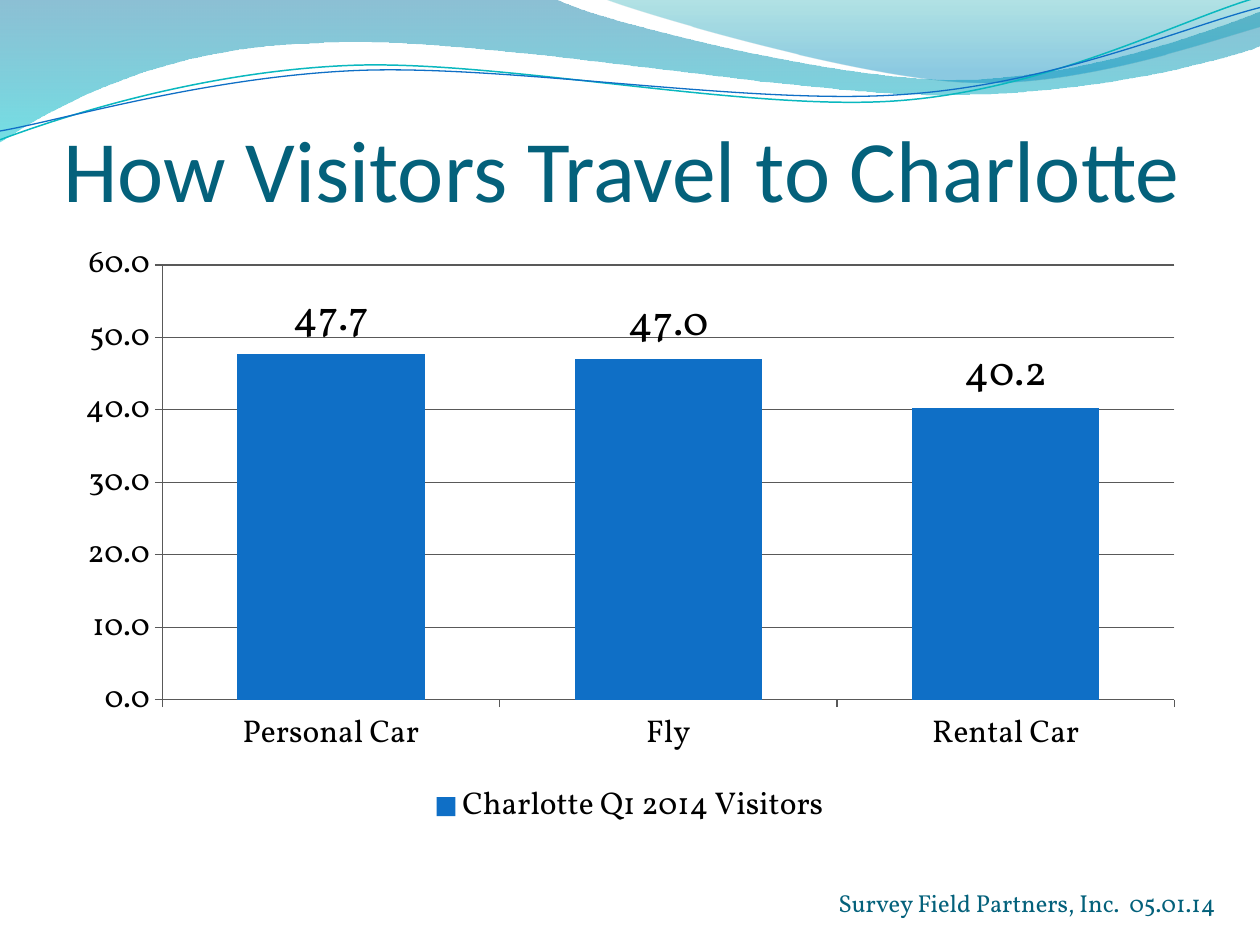
"""Build a slide with a column chart of how visitors travel to Charlotte."""
from lxml.etree import SubElement
from pptx import Presentation
from pptx.chart.data import CategoryChartData as Data
from pptx.dml.color import RGBColor as Rgb
from pptx.enum.chart import XL_CHART_TYPE as Kind, XL_LABEL_POSITION as Spot
from pptx.enum.chart import XL_LEGEND_POSITION as Side, XL_TICK_MARK as Tick
from pptx.enum.text import MSO_ANCHOR as Anchor, MSO_AUTO_SIZE as Fit, PP_ALIGN as Align
from pptx.oxml.ns import qn
from pptx.util import Inches, Pt

THEME = {
    "head": "Calibri", "body": "Vollkorn",
    "teal": "04617B", "blue": "0F6FC6", "aqua": "0AB8BF", "ink": "000000", "grid": "595959",
    "title": 50, "value": 24, "chart": 18, "foot": 14, "rule": 0.75,
}
TITLE = "How Visitors Travel to Charlotte"
FOOT = "Survey Field Partners, Inc.  05.01.14"
SERIES = "Charlotte Q1 2014 Visitors"
SHARES = {"Personal Car": 47.7, "Fly": 47.0, "Rental Car": 40.2}

BANDS = [
    {"start": (0, 0),
     "steps": [(4.4, -0.01), (4.76, 0.17, 6.64, 0.63, 7.58, 0.63),
               (8.53, 0.63, 9.58, 0.26, 10, 0.09), (10.01, 0.36),
               (9.83, 0.44, 8.7, 0.76, 7.46, 0.75), (6.22, 0.75, 3.82, 0.28, 2.57, 0.34),
               (1.29, 0.36, 0.46, 0.83, -0.01, 1.13), (0, 0)],
     "stops": [(0, "0074A1", 45), (1, "00C6CF", 55)]},
    {"start": (4.79, -0.01),
     "steps": [(5.09, 0.11, 6.82, 0.62, 7.69, 0.65), (8.56, 0.69, 9.61, 0.32, 10, 0.21),
               (10, 0), (4.79, -0.01)],
     "stops": [(0, "00A1A9", 30), (0.8, "008BBF", 45)]},
]
WAVES = [
    {"start": (0, 1.11), "color": "aqua", "width": 0.85,
     "steps": [(0.48, 0.93, 1.58, 0.57, 2.77, 0.52), (3.95, 0.47, 5.93, 0.89, 7.13, 0.8),
               (8.33, 0.71, 9.38, 0.15, 9.98, -0.02)]},
    {"start": (0, 1.04), "color": "blue", "width": 0.75,
     "steps": [(0.47, 0.96, 1.64, 0.61, 2.83, 0.56), (4.03, 0.51, 5.97, 0.84, 7.17, 0.75),
               (8.36, 0.67, 9.41, 0.21, 10, 0.06)]},
]


def tint(name):
    return Rgb.from_string(THEME.get(name, name))


def style(font, size, color="ink", face="body"):
    font.name, font.size = THEME[face], Pt(THEME[size])
    font.color.rgb = tint(color)


def trace(slide, item, close):
    pen = slide.shapes.build_freeform(*map(Inches, item["start"]))
    for step in item["steps"]:
        spots = [Inches(n) for n in step]
        pen.add_line_segments(list(zip(spots[::2], spots[1::2])), close=False)
    if close:
        pen.add_line_segments([], close=True)
    shape = pen.convert_to_shape()
    shape.shadow.inherit = False
    nodes = iter(list(shape._element.spPr.iter(qn("a:lnTo"))))
    for step in item["steps"]:
        node = next(nodes)
        if len(step) == 6:
            node.addprevious(node.makeelement(qn("a:cubicBezTo")))
            curve = node.getprevious()
            for part in (node, next(nodes), next(nodes)):
                curve.append(part[0])
                part.getparent().remove(part)
    return shape


def add_band(slide, band):
    shape = trace(slide, band, True)
    shape.line.fill.background()
    shape.fill.gradient()
    shape.fill.gradient_angle = 270
    for stop, (place, color, _) in zip(shape.fill.gradient_stops, band["stops"]):
        stop.position = place
        stop.color.rgb = tint(color)
    for node, (_, _, alpha) in zip(shape._element.spPr.iter(qn("a:srgbClr")), band["stops"]):
        SubElement(node, qn("a:alpha"), val=str(alpha * 1000))


def add_wave(slide, wave):
    shape = trace(slide, wave, False)
    shape.fill.background()
    shape.line.color.rgb = tint(wave["color"])
    shape.line.width = Pt(wave["width"])


def write(frame, text, align, *look):
    para = frame.paragraphs[0]
    para.alignment = align
    run = para.add_run()
    run.text = text
    style(run.font, *look)


def add_foot(slide):
    box = slide.shapes.add_textbox(Inches(6.33), Inches(7), Inches(3.42), Inches(0.34))
    box.text_frame.word_wrap = True
    write(box.text_frame, FOOT, Align.RIGHT, "foot", "teal")


def set_title(slide):
    title = slide.shapes.title
    title.left, title.top, title.width, title.height = map(Inches, (0.5, 0.5, 9, 1.25))
    frame = title.text_frame
    frame.auto_size, frame.vertical_anchor = Fit.NONE, Anchor.BOTTOM
    frame.margin_left = frame.margin_right = frame.margin_bottom = 0
    frame.margin_top = Inches(0.05)
    write(frame, TITLE, Align.LEFT, "title", "teal", "head")
    slide.shapes._spTree.append(title._element)


def rule(line):
    line.color.rgb = tint("grid")
    line.width = Pt(THEME["rule"])


def add_bars(slide):
    data = Data(number_format="0.0")
    data.categories = list(SHARES)
    data.add_series(SERIES, list(SHARES.values()))
    chart = slide.shapes.add_chart(
        Kind.COLUMN_CLUSTERED, Inches(0.5), Inches(1.83), Inches(9), Inches(4.8), data).chart
    style(chart.font, "chart")
    chart.has_title = False
    chart.has_legend = True
    chart.legend.position = Side.BOTTOM
    chart.legend.include_in_layout = False
    for axis in (chart.category_axis, chart.value_axis):
        axis.major_tick_mark, axis.minor_tick_mark = Tick.OUTSIDE, Tick.NONE
        rule(axis.format.line)
    scale = chart.value_axis
    scale.minimum_scale, scale.maximum_scale, scale.major_unit = 0, 60, 10
    scale.has_major_gridlines = True
    rule(scale.major_gridlines.format.line)
    scale.tick_labels.number_format = "#,##0.0"
    scale.tick_labels.number_format_is_linked = False
    plot = chart.plots[0]
    plot.gap_width, plot.vary_by_categories = 80, False
    bars = plot.series[0]
    bars.format.fill.solid()
    bars.format.fill.fore_color.rgb = tint("blue")
    tags = bars.data_labels
    tags.show_value, tags.position = True, Spot.OUTSIDE_END
    tags.number_format, tags.number_format_is_linked = "0.0", False
    style(tags.font, "value")


def main():
    deck = Presentation()
    deck.slide_width, deck.slide_height = Inches(10), Inches(7.5)
    slide = deck.slides.add_slide(deck.slide_layouts[5])
    for band in BANDS:
        add_band(slide, band)
    for wave in WAVES:
        add_wave(slide, wave)
    add_foot(slide)
    set_title(slide)
    add_bars(slide)
    deck.save("out.pptx")


if __name__ == "__main__":
    main()
